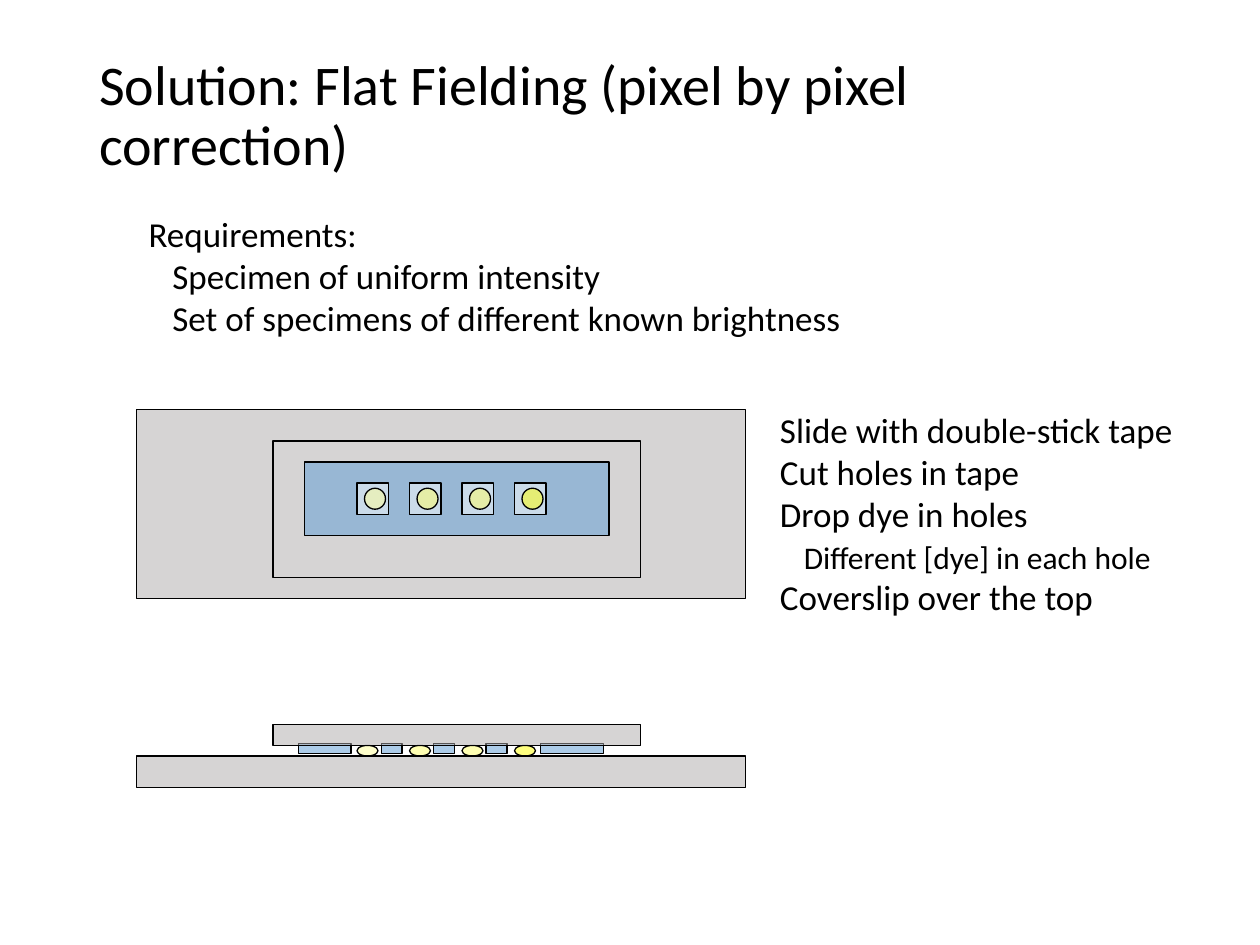
from dataclasses import dataclass
from typing import Optional

from pptx import Presentation
from pptx.dml.color import RGBColor
from pptx.enum.shapes import MSO_SHAPE as Shape
from pptx.enum.text import MSO_ANCHOR, MSO_AUTO_SIZE, PP_ALIGN
from pptx.oxml.ns import qn
from pptx.util import Pt

BLACK = RGBColor(0x00, 0x00, 0x00)
WHITE = RGBColor(0xFF, 0xFF, 0xFF)
GLASS = RGBColor(0xAF, 0xAB, 0xAB)
TAPE = RGBColor(0x5B, 0x9B, 0xD5)
DYES = [RGBColor(0xFF, 0xFF, 0x99), RGBColor(0xFF, 0xFF, 0x66),
        RGBColor(0xFF, 0xFF, 0x66), RGBColor(0xFF, 0xFF, 0x00)]
FONT = "Calibri"
HOLE_PITCH = 30
INDENT = 13.6


@dataclass
class Part:
    left: float
    top: float
    width: float
    height: float
    color: Optional[RGBColor] = None
    kind: Shape = Shape.RECTANGLE


@dataclass
class Line:
    text: str
    indent: float = 0
    size: float = 20
    before: float = 0


def draw_part(slide, part: Part) -> None:
    """Draw an outlined part, half transparent if it has a colour."""
    sp = slide.shapes.add_shape(part.kind, Pt(part.left), Pt(part.top),
                                Pt(part.width), Pt(part.height))
    sp.shadow.inherit = False
    sp.line.color.rgb = BLACK
    sp.line.width = Pt(0.75)
    if part.color is None:
        sp.fill.background()
        return
    sp.fill.solid()
    sp.fill.fore_color.rgb = part.color
    color = sp.fill._xPr.find(qn("a:solidFill"))[0]
    color.append(color.makeelement(qn("a:alpha"), {"val": "50000"}))


def place(sp, left: float, top: float, width: float, height: float):
    """Move a placeholder and return its text frame, anchored at the top."""
    sp.left, sp.top, sp.width, sp.height = map(Pt, (left, top, width, height))
    tf = sp.text_frame
    tf.word_wrap = True
    tf.auto_size = MSO_AUTO_SIZE.NONE
    tf.vertical_anchor = MSO_ANCHOR.TOP
    return tf


def add_text(p, text: str, size: float) -> None:
    p.alignment = PP_ALIGN.LEFT
    r = p.add_run()
    r.text = text
    r.font.name = FONT
    r.font.size = Pt(size)
    r.font.color.rgb = BLACK


def write_list(tf, lines: list[Line]) -> None:
    for i, line in enumerate(lines):
        p = tf.add_paragraph() if i else tf.paragraphs[0]
        pPr = p._p.get_or_add_pPr()
        pPr.set("marL", str(Pt(line.indent)))
        pPr.set("indent", "0")
        pPr.append(pPr.makeelement(qn("a:buNone"), {}))
        p.space_before = Pt(line.before)
        add_text(p, line.text, line.size)


def top_view() -> list[Part]:
    wells = [Part(204 + HOLE_PITCH * i, 276, 18, 18, WHITE) for i in range(4)]
    drops = [Part(208.3 + HOLE_PITCH * i, 279, 12, 12, dye, Shape.OVAL)
             for i, dye in enumerate(DYES)]
    return [Part(78, 234, 348, 108, GLASS), Part(174, 264, 174, 42, TAPE),
            *wells, *drops, Part(156, 252, 210, 78)]


def side_view() -> list[Part]:
    drops = [Part(204 + HOLE_PITCH * i, 426, 12, 6, dye, Shape.OVAL)
             for i, dye in enumerate(DYES)]
    ends = [Part(170.6, 424.8, 30, 6, TAPE), Part(308.9, 424.8, 36, 6, TAPE)]
    bridges = [Part(217.8 + HOLE_PITCH * i, 424.8, 12, 6, TAPE)
               for i in range(3)]
    return [*drops, *ends, *bridges,
            Part(156, 414, 210, 12, GLASS), Part(78, 432, 348, 18, GLASS)]


def main() -> None:
    prs = Presentation()
    prs.slide_width, prs.slide_height = Pt(720), Pt(540)
    slide = prs.slides.add_slide(prs.slide_layouts[3])
    title, requirements, steps = slide.placeholders

    p = place(title, 49.5, 28.8, 621, 41).paragraphs[0]
    p.line_spacing = 0.9
    add_text(p, "Solution: Flat Fielding (pixel by pixel correction)", 32)

    write_list(place(requirements, 77.7, 118, 414, 80), [
        Line("Requirements:"),
        Line("Specimen of uniform intensity", INDENT),
        Line("Set of specimens of different known brightness", INDENT),
    ])
    write_list(place(steps, 438.5, 229.7, 245, 152.6), [
        Line("Slide with double-stick tape"),
        Line("Cut holes in tape"),
        Line("Drop dye in holes"),
        Line("Different [dye] in each hole", INDENT, 18, 2),
        Line("Coverslip over the top"),
    ])

    for part in top_view() + side_view():
        draw_part(slide, part)
    prs.save("out.pptx")


if __name__ == "__main__":
    main()
